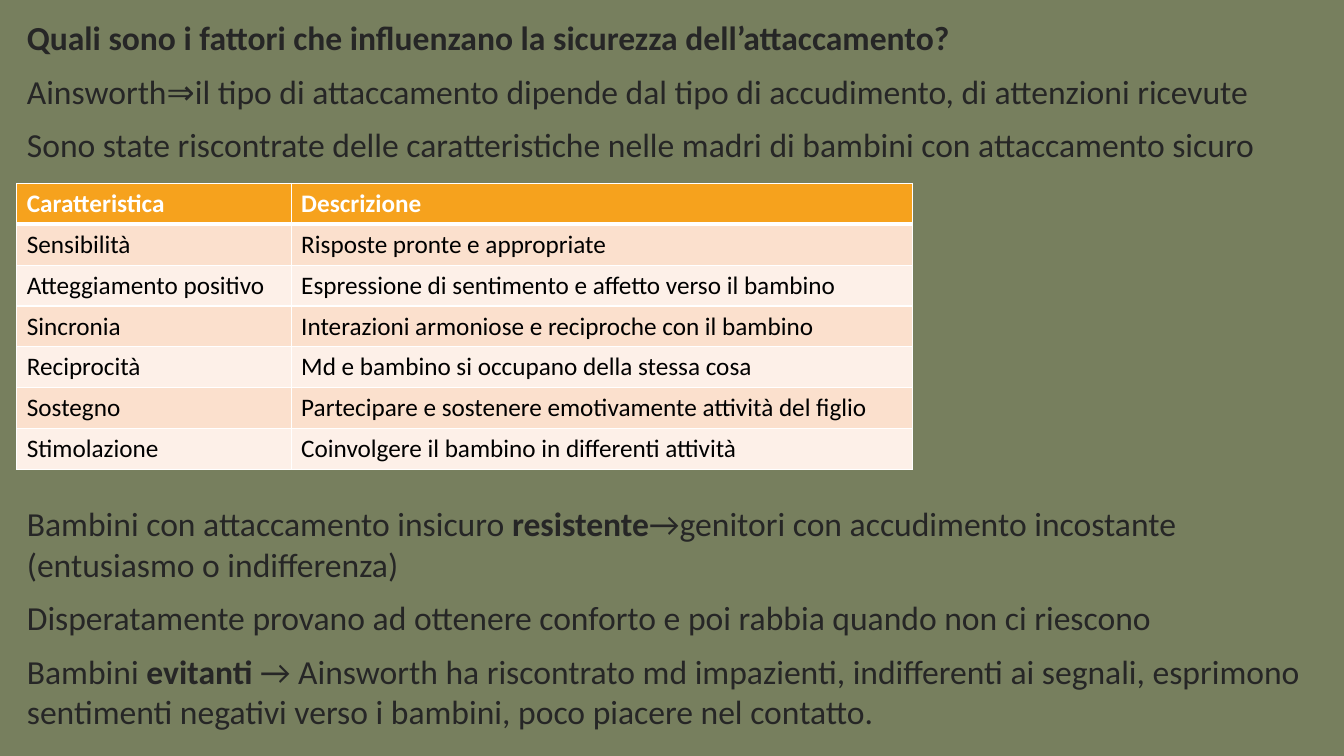
import pptx
import pptx.util
import pptx.dml.color
import pptx.enum.text
import pptx.oxml

Pt = pptx.util.Pt
TEXT = {"name": "Calibri", "size": Pt(24), "bold": False}
CELL = {"name": "Calibri", "size": Pt(18), "bold": False}
NS = "http://schemas.openxmlformats.org/drawingml/2006/main"
GAP, HOLE = 9.5, 242

LINES = [
    (GAP, [("Quali sono i fattori che influenzano la sicurezza dell’attaccamento?", True)]),
    (GAP, [("Ainsworth⇒il tipo di attaccamento dipende dal tipo di accudimento, di attenzioni ricevute", False)]),
    (GAP, [("Sono state riscontrate delle caratteristiche nelle madri di bambini con attaccamento sicuro", False)]),
    (HOLE, [("Bambini con attaccamento insicuro ", False), ("resistente", True),
            ("→genitori con accudimento incostante (entusiasmo o indifferenza)", False)]),
    (GAP, [("Disperatamente provano ad ottenere conforto e poi rabbia quando non ci riescono", False)]),
    (GAP, [("Bambini ", False), ("evitanti ", True),
           ("→ Ainsworth ha riscontrato md impazienti, indifferenti ai segnali, esprimono "
            "sentimenti negativi verso i bambini, poco piacere nel contatto.", False)]),
]
TRAITS = [
    ("Caratteristica", "Descrizione"),
    ("Sensibilità", "Risposte pronte e appropriate"),
    ("Atteggiamento positivo", "Espressione di sentimento e affetto verso il bambino"),
    ("Sincronia", "Interazioni armoniose e reciproche con il bambino"),
    ("Reciprocità", "Md e bambino si occupano della stessa cosa"),
    ("Sostegno", "Partecipare e sostenere emotivamente attività del figlio"),
    ("Stimolazione", "Coinvolgere il bambino in differenti attività"),
]


def paint(target, tone):
    target.rgb = pptx.dml.color.RGBColor.from_string(tone)


def style(item, form):
    for key, value in form.items():
        setattr(item, key, value)


def fill(target, tone):
    target.fill.solid()
    paint(target.fill.fore_color, tone)


def edge(cell, side, width):
    cell._tc.get_or_add_tcPr().append(pptx.oxml.parse_xml(
        f'<a:ln{side} xmlns:a="{NS}" w="{Pt(width)}"><a:solidFill>'
        f'<a:srgbClr val="FFFFFF"/></a:solidFill></a:ln{side}>'))


def body(slide, box):
    holder = slide.placeholders[1]
    style(holder, dict(zip(("left", "top", "width", "height"), map(Pt, box))))
    frame = holder.text_frame
    style(frame, {"word_wrap": True,
                  "auto_size": pptx.enum.text.MSO_AUTO_SIZE.NONE,
                  "vertical_anchor": pptx.enum.text.MSO_ANCHOR.TOP})
    for num, (gap, parts) in enumerate(LINES):
        para = frame.add_paragraph() if num else frame.paragraphs[0]
        style(para, {"space_before": Pt(gap), "space_after": Pt(0), "line_spacing": 1.0})
        props = para._p.get_or_add_pPr()
        props.set("marL", "0")
        props.set("indent", "0")
        props.append(pptx.oxml.parse_xml(f'<a:buNone xmlns:a="{NS}"/>'))
        for words, bold in parts:
            run = para.add_run()
            run.text = words
            style(run.font, TEXT | {"bold": bold})
            paint(run.font.color, "262626")


def table(slide, box):
    left, top, width, height = box
    grid = slide.shapes.add_table(len(TRAITS), 2, *map(Pt, box)).table
    first = 196
    grid.columns[0].width = Pt(first)
    grid.columns[1].width = Pt(width - first)
    for row, texts in enumerate(TRAITS):
        grid.rows[row].height = Pt(height / len(TRAITS))
        tone = "F6A21D" if row == 0 else ("FDF0E8", "FBE0CD")[row % 2]
        for col, words in enumerate(texts):
            cell = grid.cell(row, col)
            for side in "LRTB":
                thick = (row, side) in ((0, "B"), (1, "T"))
                edge(cell, side, 3 if thick else 1)
            fill(cell, tone)
            run = cell.text_frame.paragraphs[0].add_run()
            run.text = words
            style(run.font, CELL | {"bold": row == 0})
            paint(run.font.color, "000000" if row else "FFFFFF")


def main():
    deck = pptx.Presentation()
    style(deck, {"slide_width": Pt(960), "slide_height": Pt(540)})
    slide = deck.slides.add_slide(deck.slide_layouts[1])
    title = slide.shapes.title._element
    title.getparent().remove(title)
    fill(slide.background, "777F5E")
    body(slide, (12, 8.5, 932, 531.5))
    table(slide, (12, 131, 640, 204.4))
    deck.save("out.pptx")


if __name__ == "__main__":
    main()
